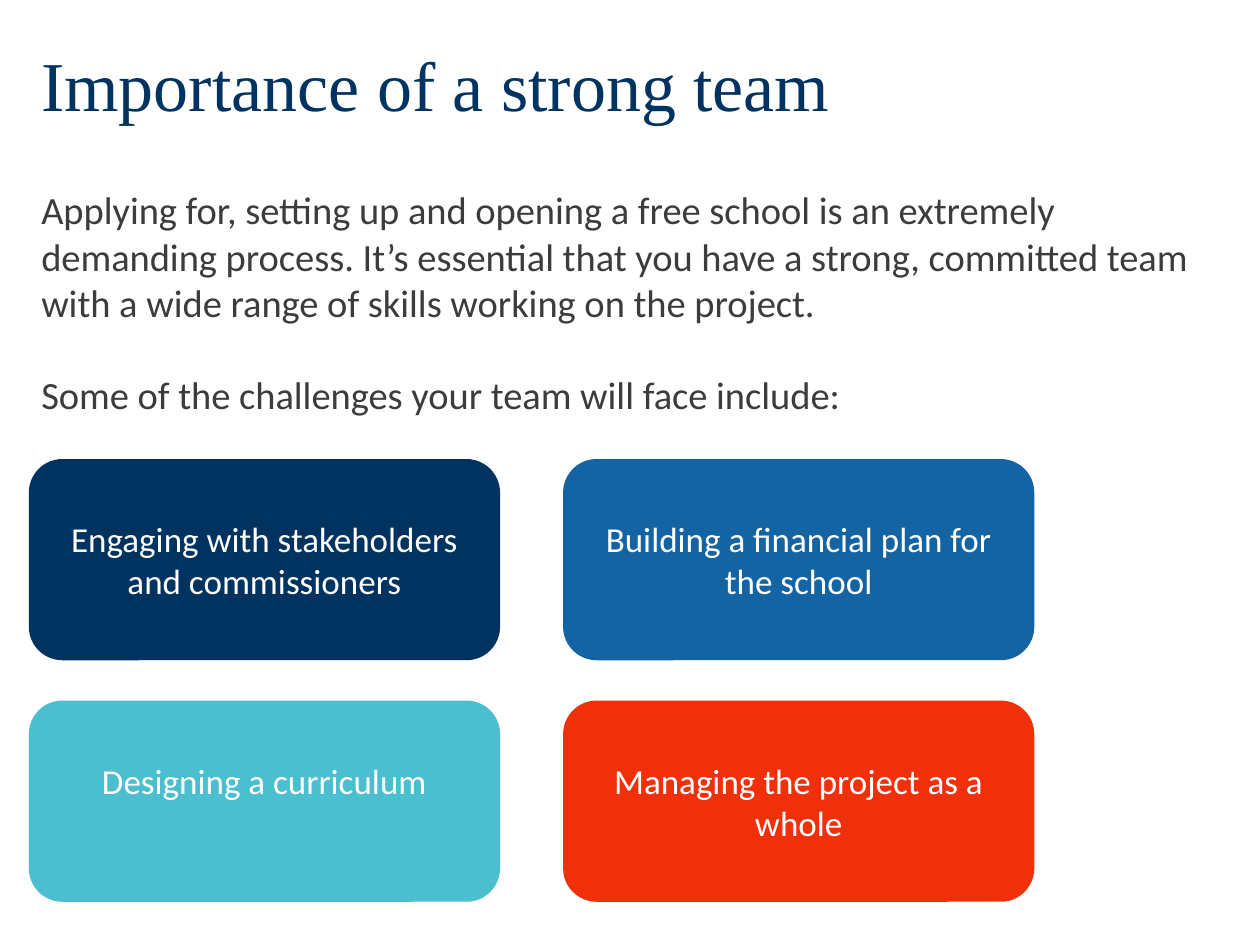
from pptx import Presentation
from pptx.dml.color import RGBColor
from pptx.enum.shapes import MSO_SHAPE
from pptx.enum.text import MSO_ANCHOR, PP_ALIGN
from pptx.util import Pt

NAVY = "00335F"
GREY = "3C3C3B"
WHITE = "FFFFFF"
LEFT = 16.5

# Cards in reading order, two to a row
CARDS = [
    ("Engaging with stakeholders and commissioners", NAVY),
    ("Building a financial plan for the school", "1464A3"),
    ("Designing a curriculum", "4BBECF"),
    ("Managing the project as a whole", "F0300A"),
]


def color(code):
    return RGBColor.from_string(code)


def write(frame, lines, size, font, code, gap=0, align=PP_ALIGN.LEFT):
    frame.word_wrap = True
    frame.vertical_anchor = MSO_ANCHOR.TOP
    for i, line in enumerate(lines):
        para = frame.add_paragraph() if i else frame.paragraphs[0]
        para.text = line
        para.alignment = align
        if i:
            para.space_before = Pt(gap)
        para.font.size = Pt(size)
        para.font.name = font
        para.font.color.rgb = color(code)


def add_text(slide, top, height, *args, **opts):
    box = slide.shapes.add_textbox(Pt(LEFT), Pt(top), Pt(680.5), Pt(height))
    write(box.text_frame, *args, **opts)


def add_card(slide, left, top, width, height, text, fill):
    card = slide.shapes.add_shape(
        MSO_SHAPE.ROUNDED_RECTANGLE, Pt(left), Pt(top), Pt(width), Pt(height))
    card.shadow.inherit = False
    card.fill.solid()
    card.fill.fore_color.rgb = color(fill)
    card.line.fill.background()
    card.text_frame.margin_top = Pt(28)
    write(card.text_frame, [text], 20, "Calibri", WHITE, align=PP_ALIGN.CENTER)


def main():
    deck = Presentation()
    deck.slide_width, deck.slide_height = Pt(720), Pt(540)
    slide = deck.slides.add_slide(deck.slide_layouts[6])

    # Title
    add_text(slide, 20, 65, ["Importance of a strong team"],
             40, "Times New Roman", NAVY)

    # Introduction
    add_text(slide, 103, 140, [
        "Applying for, setting up and opening a free school is an extremely "
        "demanding process. It’s essential that you have a strong, committed "
        "team with a wide range of skills working on the project.",
        "Some of the challenges your team will face include:",
    ], 22, "Calibri", GREY, gap=26.5)

    # Grid of challenges
    for i, (text, fill) in enumerate(CARDS):
        row, col = divmod(i, 2)
        add_card(slide, LEFT + col * 305.3, 262.3 + row * 138,
                 269.3, 115, text, fill)

    deck.save("out.pptx")


if __name__ == "__main__":
    main()
